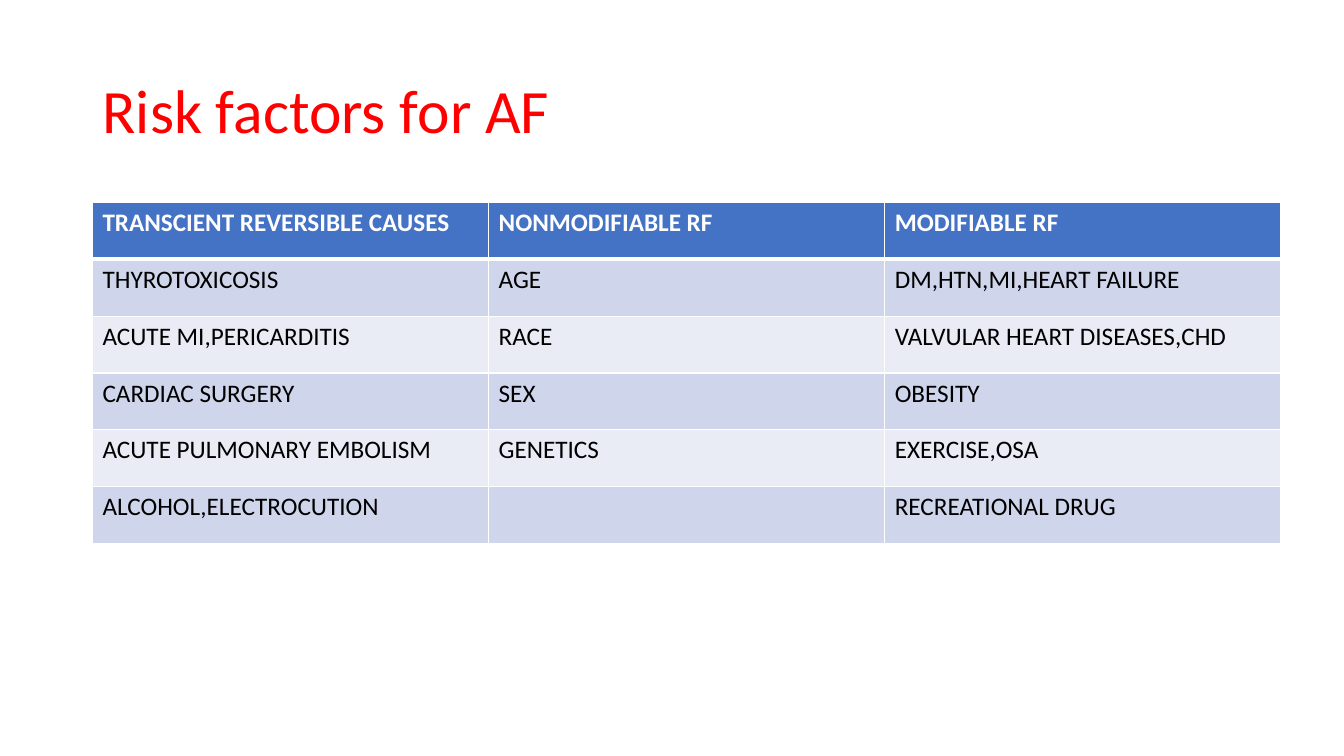
from dataclasses import dataclass

from lxml import etree
from pptx import Presentation
from pptx import util as u
from pptx.dml import color
from pptx.enum import text
from pptx.oxml import ns


@dataclass(frozen=True)
class Theme:
    """Hold the colours, font and type sizes of the slide."""
    font: str = "Calibri"
    title: str = "FF0000"
    head: str = "4472C4"
    bands: tuple = ("CFD5EA", "E9EBF5")
    light: str = "FFFFFF"
    dark: str = "000000"
    big: int = 44
    small: int = 18


@dataclass(frozen=True)
class Box:
    """Hold a region in centimetres."""
    left: float
    top: float
    width: float
    height: float

    def place(self):
        """Return the region as slide lengths."""
        return [u.Cm(n) for n in (self.left, self.top, self.width, self.height)]


THEME = Theme()
TITLE = "Risk factors for AF"
ROWS = [
    ("TRANSCIENT REVERSIBLE CAUSES", "NONMODIFIABLE RF", "MODIFIABLE RF"),
    ("THYROTOXICOSIS", "AGE", "DM,HTN,MI,HEART FAILURE"),
    ("ACUTE MI,PERICARDITIS", "RACE", "VALVULAR HEART DISEASES,CHD"),
    ("CARDIAC SURGERY", "SEX", "OBESITY"),
    ("ACUTE PULMONARY EMBOLISM", "GENETICS", "EXERCISE,OSA"),
    ("ALCOHOL,ELECTROCUTION", "", "RECREATIONAL DRUG"),
]


def add_run(para, words, size, tint, bold=False):
    """Add one styled run to a paragraph."""
    run = para.add_run()
    run.text = words
    font = run.font
    font.name, font.size, font.bold = THEME.font, u.Pt(size), bold
    font.color.rgb = color.RGBColor.from_string(tint)


def add_edge(cell, side, width):
    """Draw one border of a cell in the light colour."""
    props = cell._tc.get_or_add_tcPr()
    line = etree.SubElement(props, ns.qn(f"a:ln{side}"), w=str(u.Pt(width)))
    fill = etree.SubElement(line, ns.qn("a:solidFill"))
    etree.SubElement(fill, ns.qn("a:srgbClr"), val=THEME.light)


def fill_title(slide, box):
    """Place the title and write its words."""
    title = slide.shapes.title
    title.left, title.top, title.width, title.height = box.place()
    frame = title.text_frame
    frame.word_wrap = True
    frame.auto_size = text.MSO_AUTO_SIZE.NONE
    frame.vertical_anchor = text.MSO_ANCHOR.MIDDLE
    para = frame.paragraphs[0]
    para.alignment = text.PP_ALIGN.LEFT
    para.line_spacing = 0.9
    add_run(para, TITLE, THEME.big, THEME.title)


def fill_cell(cell, words, row):
    """Style one cell by its row and write its words."""
    head = row == 0
    for side in "LRTB":
        thick = (head and side == "B") or (row == 1 and side == "T")
        add_edge(cell, side, 3 if thick else 1)
    cell.fill.solid()
    tint = THEME.head if head else THEME.bands[(row - 1) % 2]
    cell.fill.fore_color.rgb = color.RGBColor.from_string(tint)
    para = cell.text_frame.paragraphs[0]
    para.font.size = u.Pt(THEME.small)
    if words:
        add_run(para, words, THEME.small, THEME.light if head else THEME.dark, head)


def add_grid(slide, box):
    """Add the table of risk factors with equal rows and columns."""
    table = slide.shapes.add_table(len(ROWS), len(ROWS[0]), *box.place()).table
    for col in table.columns:
        col.width = u.Cm(box.width / len(ROWS[0]))
    for row, line in enumerate(ROWS):
        table.rows[row].height = u.Cm(box.height / len(ROWS))
        for col, words in enumerate(line):
            fill_cell(table.cell(row, col), words, row)


def main():
    """Build the slide and save it."""
    deck = Presentation()
    deck.slide_width, deck.slide_height = u.Cm(33.87), u.Cm(19.05)
    slide = deck.slides.add_slide(deck.slide_layouts.get_by_name("Title Only"))
    fill_title(slide, Box(2.33, 1.01, 29.21, 3.68))
    add_grid(slide, Box(2.33, 5.1, 29.95, 8.6))
    deck.save("out.pptx")


if __name__ == "__main__":
    main()
